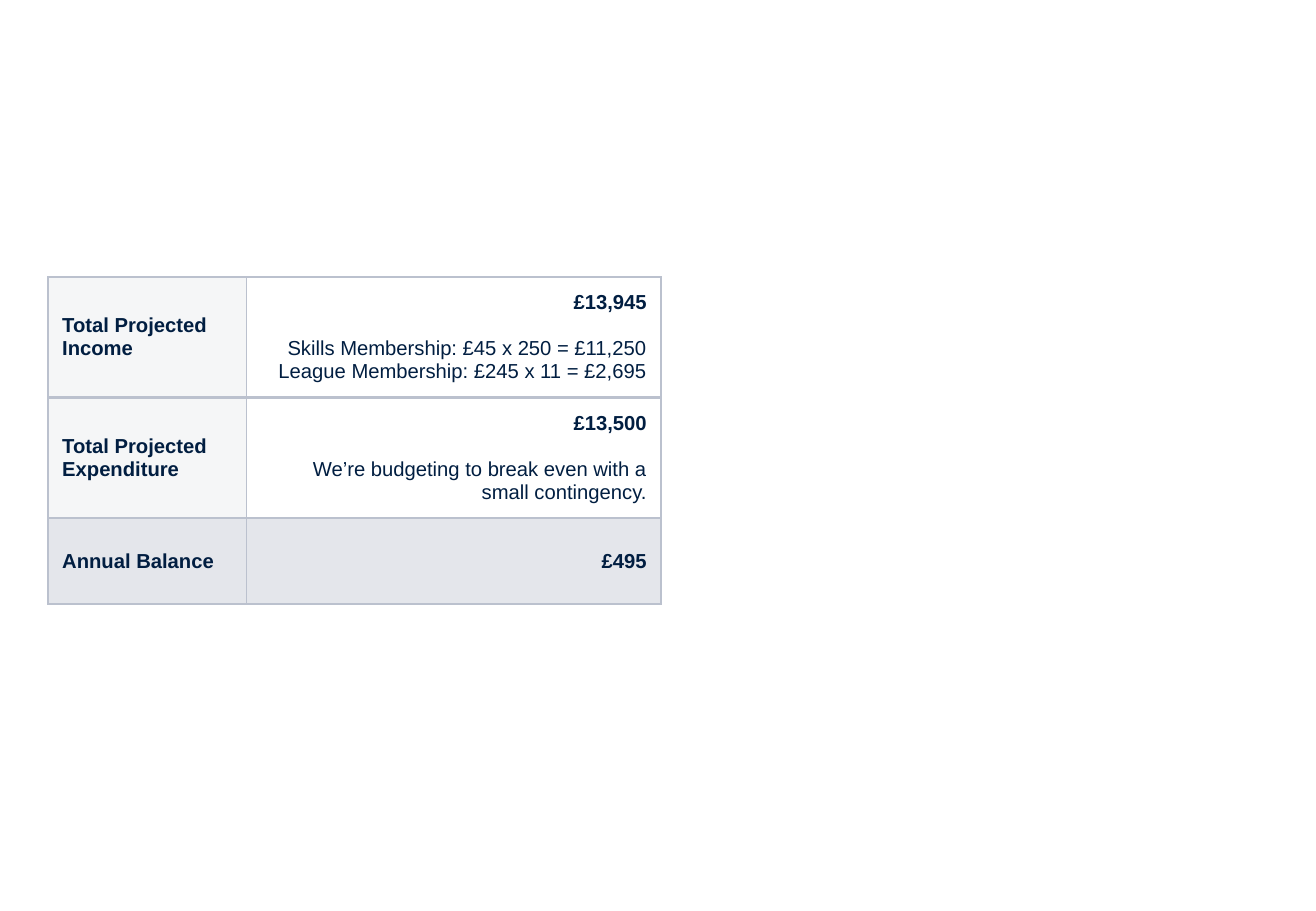
from dataclasses import dataclass

from lxml.etree import SubElement
from pptx import Presentation
from pptx.dml.color import RGBColor
from pptx.enum.text import MSO_ANCHOR, PP_ALIGN
from pptx.oxml import parse_xml
from pptx.oxml.ns import nsdecls, qn
from pptx.util import Cm, Pt


@dataclass(frozen=True)
class Theme:
    font: str = "Arial"
    text_size: int = 12
    text_color: str = "011E41"
    border_color: str = "BBC1CE"
    label_fill: str = "F1F3F5"
    value_fill: str = "FFFFFF"
    balance_fill: str = "E4E6EB"
    row_opacity: int = 70
    detail_gap: float = 13.8


def set_attributes(target, values):
    for name, value in values.items():
        setattr(target, name, value)


class BudgetSlide:
    def __init__(self, deck, theme):
        self.theme = theme
        self.page = deck.slides.add_slide(deck.slide_layouts[6])

    def add_table(self, left, top, widths, heights, rows):
        frame = self.page.shapes.add_table(
            len(rows), len(widths), Cm(left), Cm(top), Cm(sum(widths)), Cm(sum(heights)))
        table = frame.table
        set_attributes(table, {"first_row": False, "horz_banding": False})
        for column, width in zip(table.columns, widths):
            column.width = Cm(width)
        for row, height in zip(table.rows, heights):
            row.height = Cm(height)

        last = len(rows) - 1
        for index, (label, amount, details) in enumerate(rows):
            label_cell, value_cell = table.rows[index].cells
            self.write_cell(label_cell, [label], PP_ALIGN.LEFT)
            self.write_cell(value_cell, [amount, *details], PP_ALIGN.RIGHT)
            fills = (self.theme.label_fill, self.theme.value_fill)
            opacity = self.theme.row_opacity
            if index == last:
                fills, opacity = (self.theme.balance_fill,) * 2, 100
            for cell, color in zip((label_cell, value_cell), fills):
                self.fill_cell(cell, color, opacity)
                self.border_cell(cell, top=2 if index == 1 else 1,
                                 bottom=2 if index == 0 else 1)

    def write_cell(self, cell, lines, alignment):
        """Write a bold first line, with any further lines set apart below it."""
        set_attributes(cell, {
            "vertical_anchor": MSO_ANCHOR.MIDDLE,
            "margin_left": Cm(0.3), "margin_right": Cm(0.3),
            "margin_top": Cm(0.15), "margin_bottom": Cm(0.15)})
        for index, line in enumerate(lines):
            para = cell.text_frame.paragraphs[0] if index == 0 else cell.text_frame.add_paragraph()
            para.alignment = alignment
            if index == 1:
                para.space_before = Pt(self.theme.detail_gap)
            span = para.add_run()
            span.text = line
            set_attributes(span.font, {
                "name": self.theme.font, "size": Pt(self.theme.text_size), "bold": index == 0})
            span.font.color.rgb = RGBColor.from_string(self.theme.text_color)

    def fill_cell(self, cell, color, opacity):
        cell.fill.solid()
        cell.fill.fore_color.rgb = RGBColor.from_string(color)
        if opacity < 100:
            color_element = cell._tc.tcPr.find(f"{qn('a:solidFill')}/{qn('a:srgbClr')}")
            SubElement(color_element, qn("a:alpha"), val=str(opacity * 1000))

    def border_cell(self, cell, top, bottom):
        sides = {"lnL": 1, "lnR": 1, "lnT": top, "lnB": bottom}
        for position, (side, width) in enumerate(sides.items()):
            cell._tc.tcPr.insert(position, parse_xml(
                f'<a:{side} {nsdecls("a")} w="{Pt(width)}"><a:solidFill>'
                f'<a:srgbClr val="{self.theme.border_color}"/></a:solidFill></a:{side}>'))


def main():
    deck = Presentation()
    set_attributes(deck, {"slide_width": Cm(27.51), "slide_height": Cm(19.05)})
    budget = BudgetSlide(deck, Theme())
    budget.add_table(
        left=1, top=5.79, widths=[4.15, 8.67], heights=[2.52, 2.52, 1.8],
        rows=[
            ("Total Projected Income", "£13,945",
             ["Skills Membership: £45 x 250 = £11,250",
              "League Membership: £245 x 11 = £2,695"]),
            ("Total Projected Expenditure", "£13,500",
             ["We’re budgeting to break even with a small contingency."]),
            ("Annual Balance", "£495", []),
        ])
    deck.save("out.pptx")


if __name__ == "__main__":
    main()
